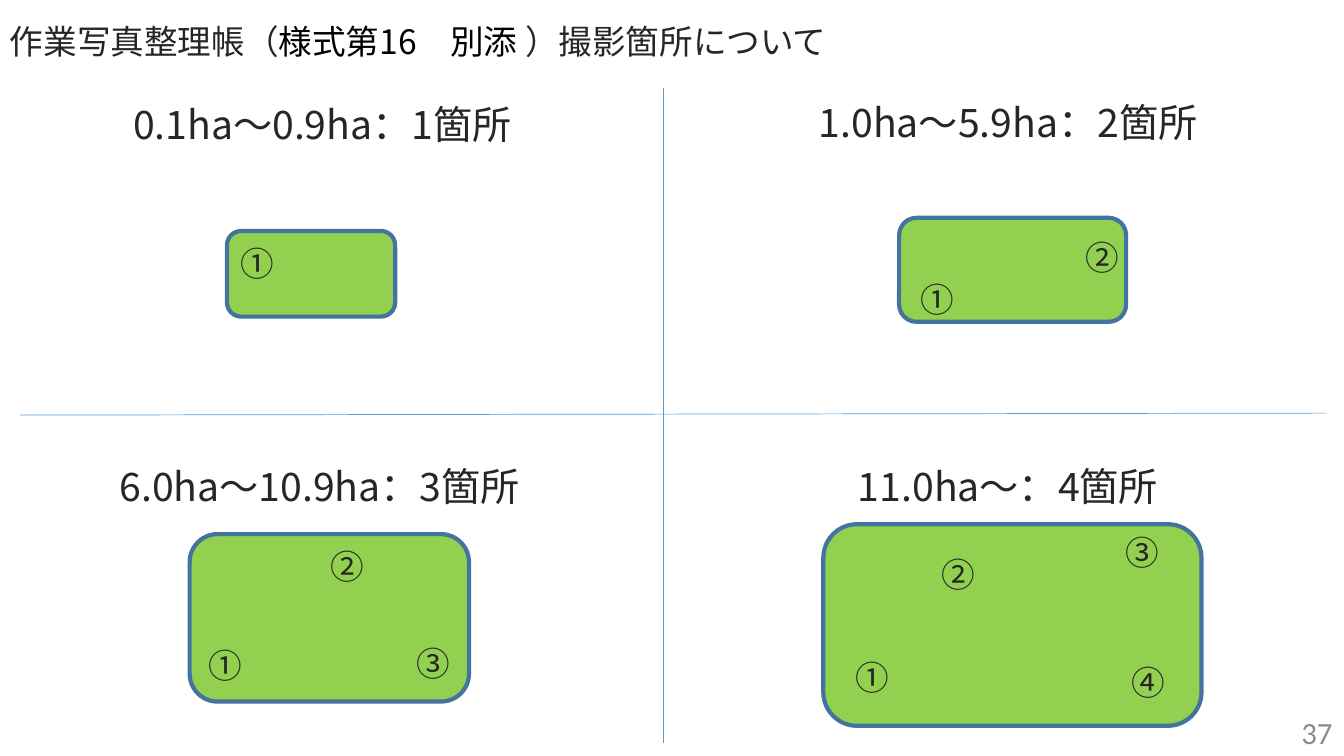
"""Builds the slide on where to take work photos, by plot area."""
from lxml import etree
from pptx import Presentation
from pptx import util as u
from pptx.dml.color import RGBColor
from pptx.enum import shapes, text
from pptx.oxml.ns import qn

INK = "262626"
CJK = "Noto Sans CJK JP"


def color(code):
    return RGBColor.from_string(code)


def write(runs, left, top, width, height, size=24, font=CJK,
          align="LEFT", anchor="TOP"):
    box = slide.shapes.add_textbox(u.Cm(left), u.Cm(top), u.Cm(width), u.Cm(height))
    frame = box.text_frame
    frame.word_wrap = True
    frame.vertical_anchor = text.MSO_ANCHOR[anchor]
    para = frame.paragraphs[0]
    para.alignment = text.PP_ALIGN[align]
    for words, code in runs:
        run = para.add_run()
        run.text = words
        run.font.size = u.Pt(size)
        run.font.name = font
        run.font.color.rgb = color(code)
        east = etree.SubElement(run.font._element, qn("a:ea"))
        east.set("typeface", font)


prs = Presentation()
prs.slide_width, prs.slide_height = u.Cm(33.87), u.Cm(19.05)
slide = prs.slides.add_slide(prs.slide_layouts[6])

write([("37", "8C8C8C")], 26.21, 17.93, 7.62, 1.02, size=22, font="Calibri",
      align="RIGHT", anchor="MIDDLE")
write([("作業写真整理帳（", INK), ("様式第16　別添 ", "000000"),
       ("）撮影箇所について", INK)], 0, 0.41, 33.87, 1.27)

plots = [
    ("0.1ha～0.9ha：1箇所", (0.2, 2.41), (5.72, 5.82, 4.24, 2.16),
     [(5.82, 5.99)]),
    ("1.0ha～5.9ha：2箇所", (17.48, 2.36), (22.66, 5.49, 5.72, 2.62),
     [(22.94, 6.91), (27.1, 5.84)]),
    ("6.0ha～10.9ha：3箇所", (0.13, 11.53), (4.78, 13.46, 7.04, 4.22),
     [(5, 16.13), (8.08, 13.64), (10.24, 16.08)]),
    ("11.0ha～：4箇所", (17.48, 11.53), (20.75, 13.21, 9.53, 5.08),
     [(21.31, 16.43), (23.47, 13.84), (28.12, 13.28), (28.27, 16.56)]),
]
for label, head, area, spots in plots:
    write([(label, INK)], *head, 15.85, 1.45, size=28, align="CENTER")
    plot = slide.shapes.add_shape(shapes.MSO_SHAPE.ROUNDED_RECTANGLE,
                                  *[u.Cm(n) for n in area])
    plot.shadow.inherit = False
    plot.fill.solid()
    plot.fill.fore_color.rgb = color("92D050")
    plot.line.color.rgb = color("43739E")
    plot.line.width = u.Pt(3)
    for mark, spot in zip("①②③④", spots):
        write([(mark, INK)], *spot, 1.63 if mark == "①" else 1.37, 1.27)

for ends in [(0.51, 10.46, 33.43, 10.41), (16.71, 2.21, 16.71, 18.72)]:
    line = slide.shapes.add_connector(shapes.MSO_CONNECTOR.STRAIGHT,
                                      *[u.Cm(n) for n in ends])
    line.line.color.rgb = color("5B9BD5")
    line.line.width = u.Pt(0.5)
    etree.SubElement(line._element.spPr, qn("a:effectLst"))

prs.save("out.pptx")
